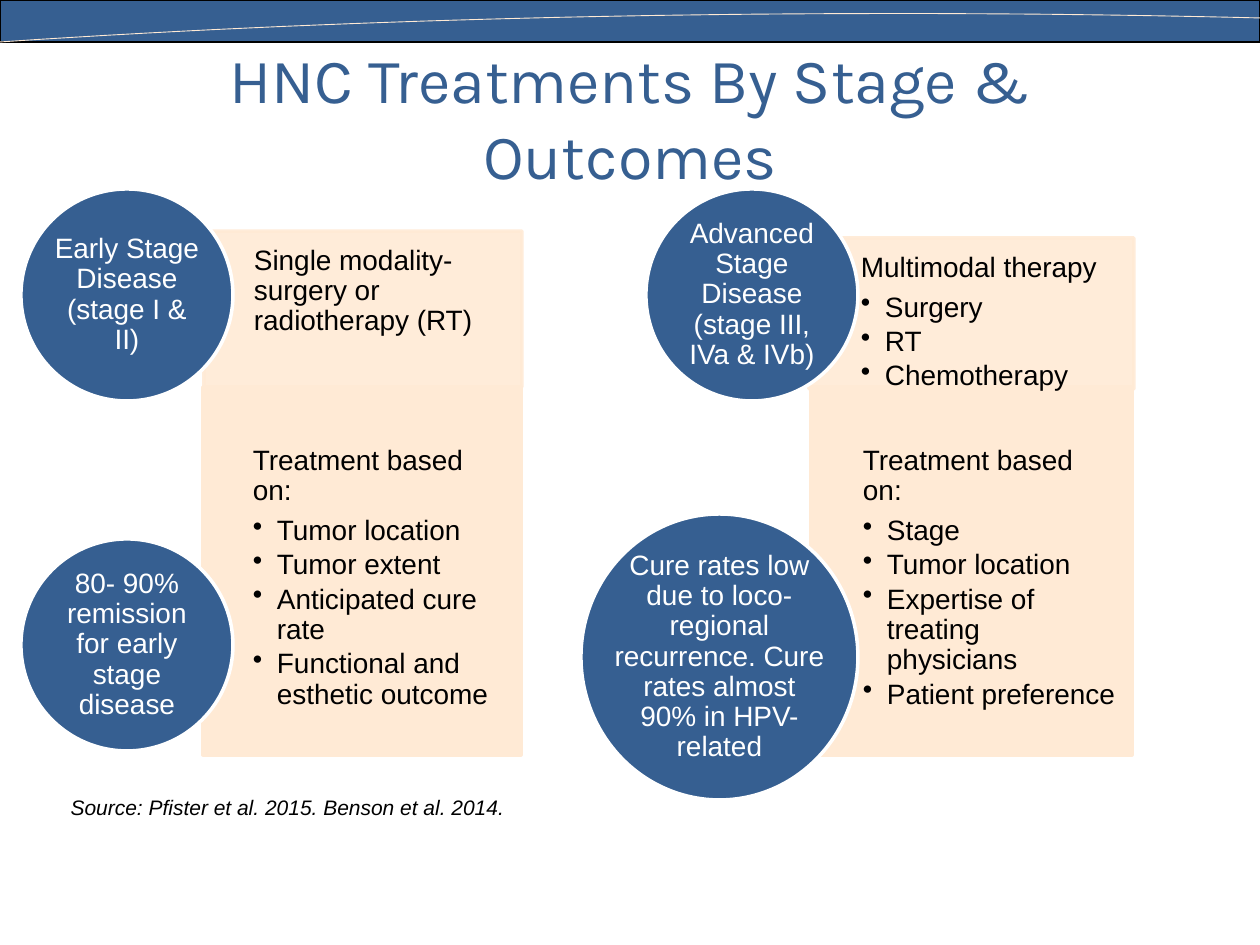
from lxml import etree
from pptx import Presentation
from pptx import util as u
from pptx.dml.color import RGBColor
from pptx.enum import shapes, text
from pptx.oxml.ns import qn

PX = 914400 // 126
WIDTH, HEIGHT = 1260, 945
BLUE, PEACH, WHITE, BLACK = "365F91", "FFEAD5", "FFFFFF", "000000"

TITLE = "HNC Treatments By Stage & Outcomes"
SOURCE = "Source: Pfister et al. 2015. Benson et al. 2014."

# (left, top, width, height), opacity %, (left inset, top inset), heading, bullets
PANELS = [
    ((204, 231, 318, 156), 90, (50, 15),
     "Single modality-surgery or radiotherapy (RT)", []),
    ((203, 387, 318, 368), 100, (50, 59), "Treatment based on:",
     ["Tumor location", "Tumor extent", "Anticipated cure rate",
      "Functional and esthetic outcome"]),
    ((811, 387, 321, 368), 100, (52, 59), "Treatment based on:",
     ["Stage", "Tumor location", "Expertise of treating physicians",
      "Patient preference"]),
    ((809, 238, 325, 151), 90, (52, 15), "Multimodal therapy",
     ["Surgery", "RT", "Chemotherapy"]),
]
# (left, top, width, height), side inset, text
CIRCLES = [
    ((21, 189, 212, 212), 0, "Early Stage Disease (stage I & II)"),
    ((646, 189, 212, 212), 0, "Advanced Stage Disease (stage III, IVa & IVb)"),
    ((21, 539, 212, 212), 0, "80- 90% remission for early stage disease"),
    ((581, 514, 277, 286), -9,
     "Cure rates low due to loco-regional recurrence. "
     "Cure rates almost 90% in HPV-related"),
]
CURVE = [(1260, 18), (937, 10), (478, 10), (0, 42)]
CURVE_STEPS = 40


def px(value):
    return u.Emu(round(value * PX))


def color(value):
    return RGBColor.from_string(value)


def style_shape(shape, fill, line, line_width, opacity=100):
    shape.shadow.inherit = False
    if fill:
        shape.fill.solid()
        shape.fill.fore_color.rgb = color(fill)
    else:
        shape.fill.background()
    shape.line.color.rgb = color(line)
    shape.line.width = u.Pt(line_width)
    if opacity < 100:
        for rgb in shape._element.spPr.iter(qn("a:srgbClr")):
            etree.SubElement(rgb, qn("a:alpha"), val=str(opacity * 1000))


def add_preset(slide, kind, box, *style):
    shape = slide.shapes.add_shape(kind, *map(px, box))
    style_shape(shape, *style)
    return shape


def set_frame(shape, insets, anchor=text.MSO_ANCHOR.TOP):
    """Set wrapping, anchor and insets (left, top, right, bottom)."""
    frame = shape.text_frame
    frame.word_wrap = True
    frame.vertical_anchor = anchor
    (frame.margin_left, frame.margin_top,
     frame.margin_right, frame.margin_bottom) = map(px, insets)
    return frame


def write(frame, content, size=16, font="Arial", fill=BLACK, italic=False,
          align=text.PP_ALIGN.LEFT, spacing=None, after=0, bullet=False):
    paragraph = frame.paragraphs[0]
    if paragraph.runs:
        paragraph = frame.add_paragraph()
    if bullet:
        properties = paragraph._p.get_or_add_pPr()
        properties.set("marL", str(px(24)))
        properties.set("indent", str(px(-24)))
        etree.SubElement(properties, qn("a:buChar"), char="•")
    paragraph.alignment = align
    paragraph.space_after = u.Pt(after)
    if spacing:
        paragraph.line_spacing = spacing
    run = paragraph.add_run()
    run.text = content
    run.font.size = u.Pt(size)
    run.font.name = font
    run.font.italic = italic
    run.font.color.rgb = color(fill)


def add_text(slide, box, content, anchor, **style):
    shape = slide.shapes.add_textbox(*map(px, box))
    write(set_frame(shape, (12.6, 6.3, 12.6, 6.3), anchor), content, **style)


def bezier(points, t):
    weights = ((1 - t) ** 3, 3 * t * (1 - t) ** 2, 3 * t * t * (1 - t), t ** 3)
    return tuple(round(sum(w * p[axis] for w, p in zip(weights, points)) * PX)
                 for axis in (0, 1))


def add_header(slide):
    add_preset(slide, shapes.MSO_SHAPE.RECTANGLE, (0, 0, WIDTH, 42),
               BLUE, BLACK, 0.75)
    points = [bezier(CURVE, step / CURVE_STEPS) for step in range(CURVE_STEPS + 1)]
    builder = slide.shapes.build_freeform(*points[0])
    builder.add_line_segments(points[1:], close=False)
    style_shape(builder.convert_to_shape(), None, PEACH, 0.5)
    add_text(slide, (63, 38, 1134, 157), TITLE, text.MSO_ANCHOR.MIDDLE,
             size=36, font="Karla", fill=BLUE, align=text.PP_ALIGN.CENTER)


def main():
    presentation = Presentation()
    presentation.slide_width, presentation.slide_height = px(WIDTH), px(HEIGHT)
    slide = presentation.slides.add_slide(presentation.slide_layouts[6])
    add_header(slide)

    for box, opacity, (left, top), heading, bullets in PANELS:
        panel = add_preset(slide, shapes.MSO_SHAPE.RECTANGLE, box,
                           PEACH, PEACH, 2, opacity)
        frame = set_frame(panel, (left, top, 15, 15))
        write(frame, heading, spacing=0.9, after=5.6)
        for item in bullets:
            write(frame, item, spacing=0.9, after=2.4, bullet=True)

    for box, inset, content in CIRCLES:
        circle = add_preset(slide, shapes.MSO_SHAPE.OVAL, box, BLUE, WHITE, 2)
        frame = set_frame(circle, (inset, 0, inset, 0), text.MSO_ANCHOR.MIDDLE)
        write(frame, content, fill=WHITE, align=text.PP_ALIGN.CENTER,
              spacing=0.9, after=5.6)

    add_text(slide, (58, 788, 1144, 38), SOURCE, text.MSO_ANCHOR.TOP,
             size=12, italic=True)
    presentation.save("out.pptx")


if __name__ == "__main__":
    main()
